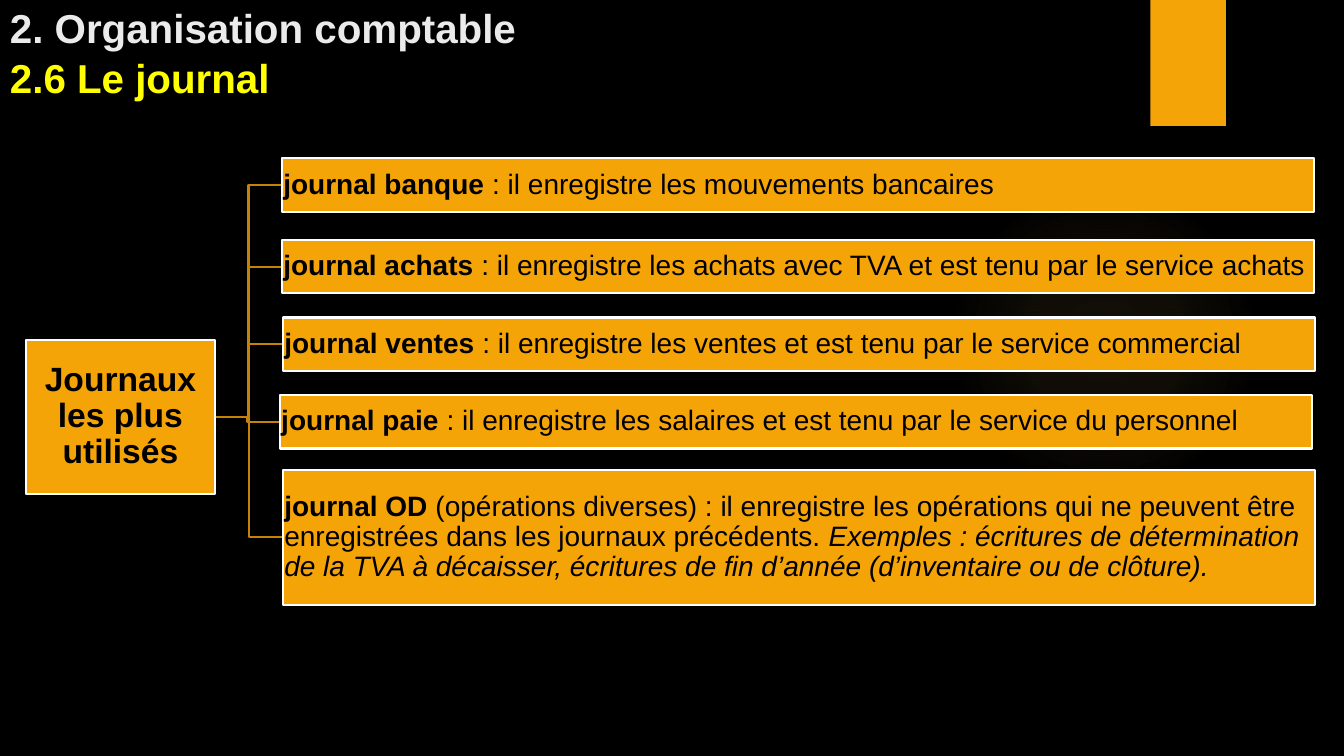
from dataclasses import dataclass

from lxml import etree
from pptx import Presentation
from pptx import util as u
from pptx.dml.color import RGBColor
from pptx.enum import shapes, text
from pptx.oxml import ns, parse_xml

BLACK = RGBColor(0x00, 0x00, 0x00)
WHITE = RGBColor(0xFF, 0xFF, 0xFF)
ORANGE = RGBColor(0xF5, 0xA4, 0x08)
BROWN = RGBColor(0xC4, 0x83, 0x06)
PALE_ORANGE = RGBColor(0xFA, 0xC9, 0x6A)
PALE_GREY = RGBColor(0xEB, 0xEB, 0xEB)
YELLOW = RGBColor(0xFF, 0xFF, 0x00)
FONT = "Arial"


@dataclass(frozen=True)
class Area:
    left: float
    top: float
    width: float
    height: float

    @property
    def middle(self) -> float:
        return self.top + self.height / 2

    def lengths(self) -> list[u.Length]:
        return [u.Inches(v) for v in (self.left, self.top, self.width, self.height)]


@dataclass(frozen=True)
class Journal:
    name: str
    role: str
    left: float
    top: float
    height: float = 0.53
    examples: str = ""

    @property
    def area(self) -> Area:
        return Area(self.left, self.top, 10.23, self.height)


ROOT = Area(0.26, 3.37, 1.87, 1.53)
JOURNALS = [
    Journal("journal banque ", ": il enregistre les mouvements bancaires", 2.8, 1.57),
    Journal("journal achats ",
            ": il enregistre les achats avec TVA et est tenu par le service achats",
            2.8, 2.38),
    Journal("journal ventes ",
            ": il enregistre les ventes et est tenu par le service commercial",
            2.81, 3.15),
    Journal("journal paie ",
            ": il enregistre les salaires et est tenu par le service du personnel",
            2.78, 3.92),
    Journal("journal OD ",
            "(opérations diverses) : il enregistre les opérations qui ne peuvent être "
            "enregistrées dans les journaux précédents. ",
            2.81, 4.66, 1.34,
            "Exemples : écritures de détermination de la TVA à décaisser, "
            "écritures de fin d’année (d’inventaire ou de clôture)."),
]


def style_span(span, size: float, color: RGBColor, bold=False, italic=False) -> None:
    font = span.font
    font.name, font.size = FONT, u.Pt(size)
    font.bold, font.italic = bold, italic
    font.color.rgb = color


def set_frame(frame, anchor, inset: float) -> None:
    frame.word_wrap = True
    frame.vertical_anchor = anchor
    frame.margin_left = frame.margin_right = u.Inches(inset)
    frame.margin_top = frame.margin_bottom = u.Inches(inset)


def add_glow(page, area: Area) -> None:
    """Draw a faint round light that fades out from its centre."""
    glow = page.shapes.add_shape(shapes.MSO_SHAPE.OVAL, *area.lengths())
    glow.shadow.inherit = False
    glow.line.fill.background()
    stops = "".join(
        f'<a:gs pos="{place * 1000}"><a:srgbClr val="{PALE_ORANGE}">'
        f'<a:alpha val="{alpha * 1000}"/></a:srgbClr></a:gs>'
        for place, alpha in ((0, 7), (36, 6), (69, 0), (100, 0)))
    gradient = parse_xml(
        f'<a:gradFill {ns.nsdecls("a")}><a:gsLst>{stops}</a:gsLst><a:path path="circle">'
        '<a:fillToRect l="50000" t="50000" r="50000" b="50000"/></a:path></a:gradFill>')
    glow.element.spPr.find(ns.qn("a:prstGeom")).addnext(gradient)


def add_orange_box(page, area: Area, outlined: bool = True):
    box = page.shapes.add_shape(shapes.MSO_SHAPE.RECTANGLE, *area.lengths())
    box.shadow.inherit = False
    box.fill.solid()
    box.fill.fore_color.rgb = ORANGE
    if outlined:
        box.line.color.rgb = WHITE
        box.line.width = u.Pt(1.5)
    else:
        box.line.fill.background()
    return box


def add_title(page, area: Area) -> None:
    box = page.shapes.add_textbox(*area.lengths())
    set_frame(box.text_frame, text.MSO_ANCHOR.BOTTOM, 0.05)
    box.text_frame.margin_left = box.text_frame.margin_right = u.Inches(0.1)
    para = box.text_frame.paragraphs[0]
    para.text = "2. Organisation comptable\v2.6 Le journal"
    para.line_spacing = 1.05
    for span, color in zip(para.runs, (PALE_GREY, YELLOW)):
        style_span(span, 28.8, color, bold=True)


def add_elbow(page, journal: Journal) -> None:
    """Link the root box to the left side of a journal box."""
    ends = (ROOT.left + ROOT.width, ROOT.middle, journal.left, journal.area.middle)
    link = page.shapes.add_connector(
        shapes.MSO_CONNECTOR.ELBOW, *(u.Inches(v) for v in ends))
    link.line.color.rgb = BROWN
    link.line.width = u.Pt(1.5)
    etree.SubElement(link.element.spPr, ns.qn("a:effectLst"))


def add_root(page) -> None:
    box = add_orange_box(page, ROOT)
    set_frame(box.text_frame, text.MSO_ANCHOR.MIDDLE, 0.02)
    para = box.text_frame.paragraphs[0]
    para.text = "Journaux les plus utilisés"
    para.alignment = text.PP_ALIGN.CENTER
    para.line_spacing = 0.9
    style_span(para.runs[0], 24, BLACK, bold=True)


def add_journal(page, journal: Journal) -> None:
    box = add_orange_box(page, journal.area)
    set_frame(box.text_frame, text.MSO_ANCHOR.MIDDLE, 0.01)
    para = box.text_frame.paragraphs[0]
    para.text = journal.name
    para.alignment = text.PP_ALIGN.LEFT
    para.line_spacing = 0.9
    style_span(para.runs[0], 20, BLACK, bold=True)
    for words, italic in ((journal.role, False), (journal.examples, True)):
        if words:
            span = para.add_run()
            span.text = words
            style_span(span, 20, BLACK, italic=italic)


def main() -> None:
    deck = Presentation()
    deck.slide_width, deck.slide_height = u.Inches(13.33), u.Inches(7.5)
    page = deck.slides.add_slide(deck.slide_layouts[6])
    page.background.fill.solid()
    page.background.fill.fore_color.rgb = BLACK

    add_glow(page, Area(9.41, 1.83, 3.08, 3.08))
    add_orange_box(page, Area(11.41, 0, 0.75, 1.25), outlined=False)
    add_title(page, Area(0, 0.37, 11.22, 0.69))
    for journal in reversed(JOURNALS):
        add_elbow(page, journal)
    add_root(page)
    for journal in JOURNALS:
        add_journal(page, journal)
    deck.save("out.pptx")


if __name__ == "__main__":
    main()
